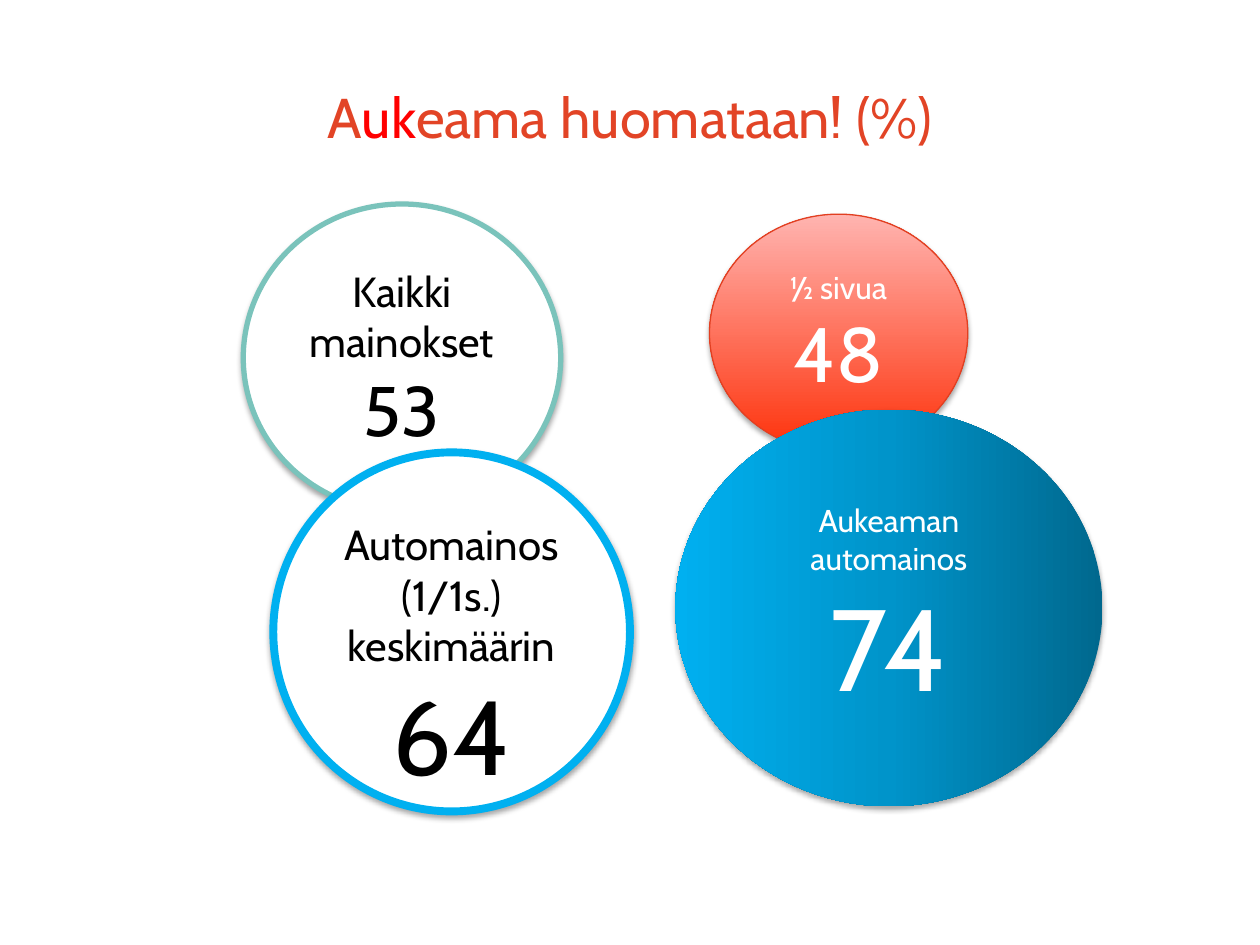
import pptx
import pptx.dml.color
import pptx.enum.shapes
import pptx.enum.text
import pptx.oxml
import pptx.oxml.ns
import pptx.util

Pt = pptx.util.Pt
COLORS = {
    "title": "E24426", "accent": "FF0000", "black": "000000", "white": "FFFFFF",
    "green": "7AC3BB", "blue": "00B0F0", "mid_blue": "0094CA", "dark_blue": "00688E",
    "red_line": "E23F21", "red": "FE310A", "pink": "FFB4B0",
}


def rgb(name):
    return pptx.dml.color.RGBColor.from_string(COLORS[name])


def drawing_xml(text):
    """Parse one element of the DrawingML namespace."""
    head, tail = text.split(" ", 1)
    return pptx.oxml.parse_xml(f"{head} {pptx.oxml.ns.nsdecls('a')} {tail}")


class BubblePage:
    """The slide and the style shared by its elements."""
    font = "Cabin"

    def __init__(self, deck):
        self.page = deck.slides.add_slide(deck.slide_layouts[5])

    def span(self, para, text, size, color):
        span = para.add_run()
        span.text = text
        span.font.name = self.font
        span.font.size = Pt(size)
        span.font.color.rgb = rgb(color)

    def paragraphs(self, frame, paras, color):
        """Fill a frame; each paragraph is a list of (text, size[, color])."""
        frame.word_wrap = True
        frame.vertical_anchor = pptx.enum.text.MSO_ANCHOR.MIDDLE
        for index, spans in enumerate(paras):
            para = frame.add_paragraph() if index else frame.paragraphs[0]
            para.alignment = pptx.enum.text.PP_ALIGN.CENTER
            for text, size, *own in spans:
                self.span(para, text, size, own[0] if own else color)

    def title(self, place, spans):
        box = self.page.shapes.title
        box.left, box.top, box.width, box.height = map(Pt, place)
        self.paragraphs(box.text_frame, [spans], "title")

    def gradient(self, fill, stops, angle):
        """Spread the colours evenly; the angle runs counter-clockwise."""
        fill.gradient()
        fill.gradient_angle = angle
        stop_list = fill._xPr.find(".//" + pptx.oxml.ns.qn("a:gsLst"))
        stop_list.clear()
        for index, name in enumerate(stops):
            position = 100000 * index // (len(stops) - 1)
            stop_list.append(drawing_xml(
                f'<a:gs pos="{position}"><a:srgbClr val="{COLORS[name]}"/></a:gs>'))

    def shadow(self, shape):
        shape.shadow.inherit = False
        effects = shape._element.spPr.find(pptx.oxml.ns.qn("a:effectLst"))
        effects.append(drawing_xml(
            f'<a:outerShdw blurRad="{Pt(3.1)}" dist="{Pt(1.8)}" dir="5400000" rotWithShape="0">'
            f'<a:srgbClr val="{COLORS["black"]}"><a:alpha val="35000"/></a:srgbClr>'
            '</a:outerShdw>'))

    def bubble(self, place, paras, color, stops=None, angle=0, line=None, inset_top=3.6):
        """Draw an ellipse, white unless gradient stops are given."""
        shape = self.page.shapes.add_shape(
            pptx.enum.shapes.MSO_SHAPE.OVAL, *map(Pt, place))
        if stops:
            self.gradient(shape.fill, stops, angle)
        else:
            shape.fill.solid()
            shape.fill.fore_color.rgb = rgb("white")
        if line:
            shape.line.color.rgb = rgb(line[0])
            shape.line.width = Pt(line[1])
        else:
            shape.line.fill.background()
        self.shadow(shape)
        shape.text_frame.margin_top = Pt(inset_top)
        self.paragraphs(shape.text_frame, paras, color)


def main():
    deck = pptx.Presentation()
    deck.slide_width, deck.slide_height = Pt(720), Pt(540)
    page = BubblePage(deck)
    page.title((36, 21.6, 648, 90), [
        ("A", 32), ("uk", 32, "accent"), ("eama huomataan! (%)", 32)])
    page.bubble((405.4, 122.4, 147.6, 136), [[("½ sivua", 18)], [("48", 44)]], "white",
                stops=("red", "pink"), angle=90, line=("red_line", 0.75))
    page.bubble((139, 116.6, 181.4, 175.7), [[("Kaikki mainokset ", 24), ("53", 40)]],
                "black", line=("green", 3))
    page.bubble((156.2, 258.5, 203.8, 205.2),
                [[("Automainos (1/1s.) keskimäärin", 24)], [("64", 60)]],
                "black", line=("blue", 4.5), inset_top=32.8)
    page.bubble((385.9, 234, 244.1, 226.8), [[("Aukeaman automainos", 18)], [("74", 66)]],
                "white", stops=("dark_blue", "mid_blue", "blue"), angle=180)
    deck.save("out.pptx")


if __name__ == "__main__":
    main()
